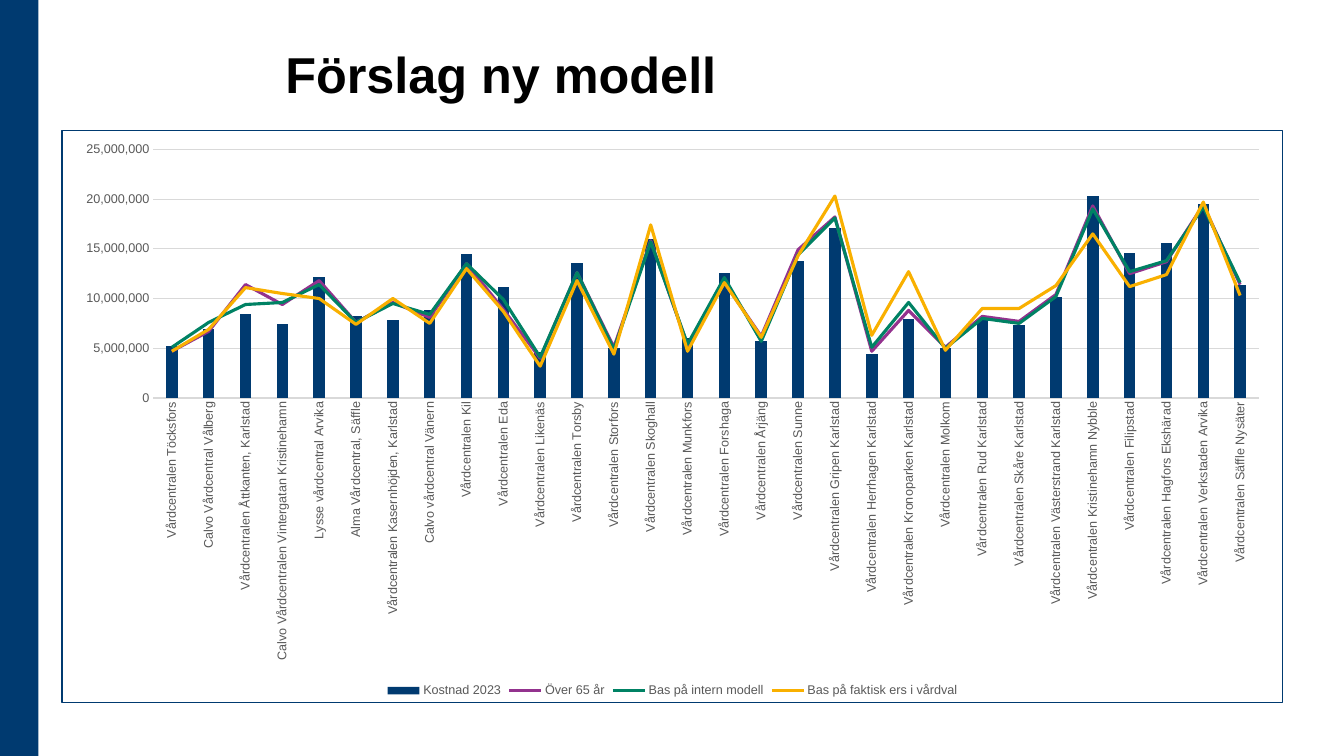
"""Build a slide comparing care-centre costs in 2023 with three payment models."""
from copy import deepcopy
from dataclasses import dataclass

from lxml.etree import SubElement
from pptx import Presentation
from pptx.chart.axis import CategoryAxis, ValueAxis
from pptx.chart.chart import Chart
from pptx.chart.data import CategoryChartData
from pptx.dml.color import RGBColor
from pptx.enum.chart import XL_CHART_TYPE as ChartType, XL_LEGEND_POSITION as LegendPosition
from pptx.enum.chart import XL_MARKER_STYLE as MarkerStyle, XL_TICK_MARK as TickMark
from pptx.enum.shapes import MSO_SHAPE as ShapeType
from pptx.enum.text import MSO_ANCHOR as Anchor, MSO_AUTO_SIZE as AutoSize, PP_ALIGN as Align
from pptx.oxml import parse_xml
from pptx.oxml.ns import nsdecls, qn
from pptx.slide import Slide
from pptx.text.text import Font
from pptx.util import Emu, Pt

EMU_PER_PX = 9144
VALUE_STEP = 100_000


@dataclass(frozen=True)
class Theme:
    font: str = "Arial"
    navy: str = "003A70"
    purple: str = "93328E"
    green: str = "008264"
    amber: str = "F9B000"
    white: str = "FFFFFF"
    black: str = "000000"
    label: str = "595959"
    grid: str = "D9D9D9"
    title_size: int = 36
    label_size: int = 9
    thin: float = 0.75
    thick: float = 2.25


@dataclass(frozen=True)
class CostSeries:
    name: str
    color: str
    values: tuple[int, ...]


THEME = Theme()
SIDEBAR = (0, 0, 38, 750)
TITLE = (273, 0, 787, 145)
CHART = (61, 129, 1212, 568)

CARE_CENTRES = (
    "Vårdcentralen Töcksfors", "Calvo Vårdcentral Vålberg",
    "Vårdcentralen Åttkanten, Karlstad", "Calvo Vårdcentralen Vintergatan Kristinehamn",
    "Lysse vårdcentral Arvika", "Alma Vårdcentral, Säffle",
    "Vårdcentralen Kasernhöjden, Karlstad", "Calvo vårdcentral Vänern",
    "Vårdcentralen Kil", "Vårdcentralen Eda", "Vårdcentralen Likenäs",
    "Vårdcentralen Torsby", "Vårdcentralen Storfors", "Vårdcentralen Skoghall",
    "Vårdcentralen Munkfors", "Vårdcentralen Forshaga", "Vårdcentralen Årjäng",
    "Vårdcentralen Sunne", "Vårdcentralen Gripen Karlstad",
    "Vårdcentralen Herrhagen Karlstad", "Vårdcentralen Kronoparken Karlstad",
    "Vårdcentralen Molkom", "Vårdcentralen Rud Karlstad", "Vårdcentralen Skåre Karlstad",
    "Vårdcentralen Västerstrand Karlstad", "Vårdcentralen Kristinehamn Nybble",
    "Vårdcentralen Filipstad", "Vårdcentralen Hagfors Ekshärad",
    "Vårdcentralen Verkstaden Arvika", "Vårdcentralen Säffle Nysäter",
)

COSTS = (
    CostSeries("Kostnad 2023", THEME.navy, (
        52, 69, 84, 74, 122, 82, 78, 88, 145, 112, 46, 136, 50, 160, 60,
        126, 57, 138, 171, 44, 79, 50, 79, 73, 102, 203, 146, 156, 195, 114)),
    CostSeries("Över 65 år", THEME.purple, (
        47, 67, 114, 94, 118, 76, 96, 81, 135, 89, 40, 126, 51, 158, 53,
        116, 62, 149, 182, 47, 88, 51, 82, 77, 104, 193, 125, 137, 194, 114)),
    CostSeries("Bas på intern modell", THEME.green, (
        51, 76, 94, 96, 114, 76, 95, 84, 135, 99, 41, 126, 49, 157, 54,
        121, 57, 144, 181, 51, 96, 50, 80, 75, 102, 190, 127, 138, 192, 116)),
    CostSeries("Bas på faktisk ers i vårdval", THEME.amber, (
        47, 69, 111, 105, 100, 74, 100, 75, 130, 87, 32, 118, 44, 174, 47,
        116, 61, 143, 203, 63, 127, 48, 90, 90, 113, 165, 112, 124, 197, 103)),
)


def px(*lengths: int) -> list[Emu]:
    return [Emu(length * EMU_PER_PX) for length in lengths]


def rgb(color: str) -> RGBColor:
    return RGBColor.from_string(color)


def style_font(font: Font, size: int, color: str, bold: bool = False) -> None:
    font.name, font.size, font.bold = THEME.font, Pt(size), bold
    font.color.rgb = rgb(color)


def add_sidebar(slide: Slide) -> None:
    sidebar = slide.shapes.add_shape(ShapeType.RECTANGLE, *px(*SIDEBAR))
    sidebar.shadow.inherit = False
    sidebar.fill.solid()
    sidebar.fill.fore_color.rgb = rgb(THEME.navy)
    sidebar.line.fill.background()


def set_title(slide: Slide, text: str) -> None:
    title = slide.shapes.title
    title.left, title.top, title.width, title.height = px(*TITLE)
    title.text_frame.text = text
    title.text_frame.auto_size = AutoSize.NONE
    title.text_frame.vertical_anchor = Anchor.MIDDLE
    paragraph = title.text_frame.paragraphs[0]
    paragraph.alignment = Align.LEFT
    style_font(paragraph.font, THEME.title_size, THEME.black, bold=True)


def move_models_to_lines(chart: Chart) -> None:
    bars = chart.plots[0]._element
    lines = parse_xml(f'<c:lineChart {nsdecls("c")}><c:grouping val="standard"/>'
                      '<c:varyColors val="0"/></c:lineChart>')
    for series in bars.findall(qn("c:ser"))[1:]:
        for bar_setting in series.findall(qn("c:invertIfNegative")):
            series.remove(bar_setting)
        lines.append(series)
    SubElement(lines, qn("c:marker")).set("val", "1")
    for axis_id in bars.findall(qn("c:axId")):
        lines.append(deepcopy(axis_id))
    bars.addnext(lines)


def frame_chart(chart: Chart) -> None:
    frame = parse_xml(
        f'<c:spPr {nsdecls("c", "a")}>'
        f'<a:solidFill><a:srgbClr val="{THEME.white}"/></a:solidFill>'
        f'<a:ln w="{Pt(THEME.thin)}"><a:solidFill><a:srgbClr val="{THEME.navy}"/>'
        '</a:solidFill></a:ln></c:spPr>')
    chart._chartSpace.find(qn("c:chart")).addnext(frame)


def style_axes(category_axis: CategoryAxis, value_axis: ValueAxis) -> None:
    for axis in (category_axis, value_axis):
        axis.major_tick_mark = axis.minor_tick_mark = TickMark.NONE
        style_font(axis.tick_labels.font, THEME.label_size, THEME.label)
    value_axis.minimum_scale, value_axis.maximum_scale = 0, 25_000_000
    value_axis.major_unit = 5_000_000
    value_axis.tick_labels.number_format = "#,##0"
    value_axis.tick_labels.number_format_is_linked = False
    value_axis.format.line.fill.background()
    for line in (category_axis.format.line, value_axis.major_gridlines.format.line):
        line.color.rgb, line.width = rgb(THEME.grid), Pt(THEME.thin)
    label_body = category_axis._element.find(f'{qn("c:txPr")}/{qn("a:bodyPr")}')
    label_body.set("rot", "-5400000")
    label_body.set("vert", "horz")


def add_cost_chart(slide: Slide) -> None:
    data = CategoryChartData(number_format="#,##0")
    data.categories = CARE_CENTRES
    for cost in COSTS:
        data.add_series(cost.name, [value * VALUE_STEP for value in cost.values])
    chart = slide.shapes.add_chart(ChartType.COLUMN_CLUSTERED, *px(*CHART), data).chart
    style_font(chart.font, THEME.label_size, THEME.label)
    chart.has_title = False
    chart.has_legend = True
    chart.legend.position = LegendPosition.BOTTOM
    chart.legend.include_in_layout = False
    frame_chart(chart)
    style_axes(chart.category_axis, chart.value_axis)
    move_models_to_lines(chart)
    columns, lines = chart.plots
    columns.gap_width, columns.overlap = 219, -27
    columns.vary_by_categories = False
    column_fill = columns.series[0].format.fill
    column_fill.solid()
    column_fill.fore_color.rgb = rgb(COSTS[0].color)
    for series, cost in zip(lines.series, COSTS[1:]):
        series.smooth = False
        series.marker.style = MarkerStyle.NONE
        series.format.line.color.rgb = rgb(cost.color)
        series.format.line.width = Pt(THEME.thick)


presentation = Presentation()
presentation.slide_width, presentation.slide_height = px(1333, 750)
slide = presentation.slides.add_slide(presentation.slide_layouts[5])
add_sidebar(slide)
set_title(slide, "Förslag ny modell")
add_cost_chart(slide)
presentation.save("out.pptx")
